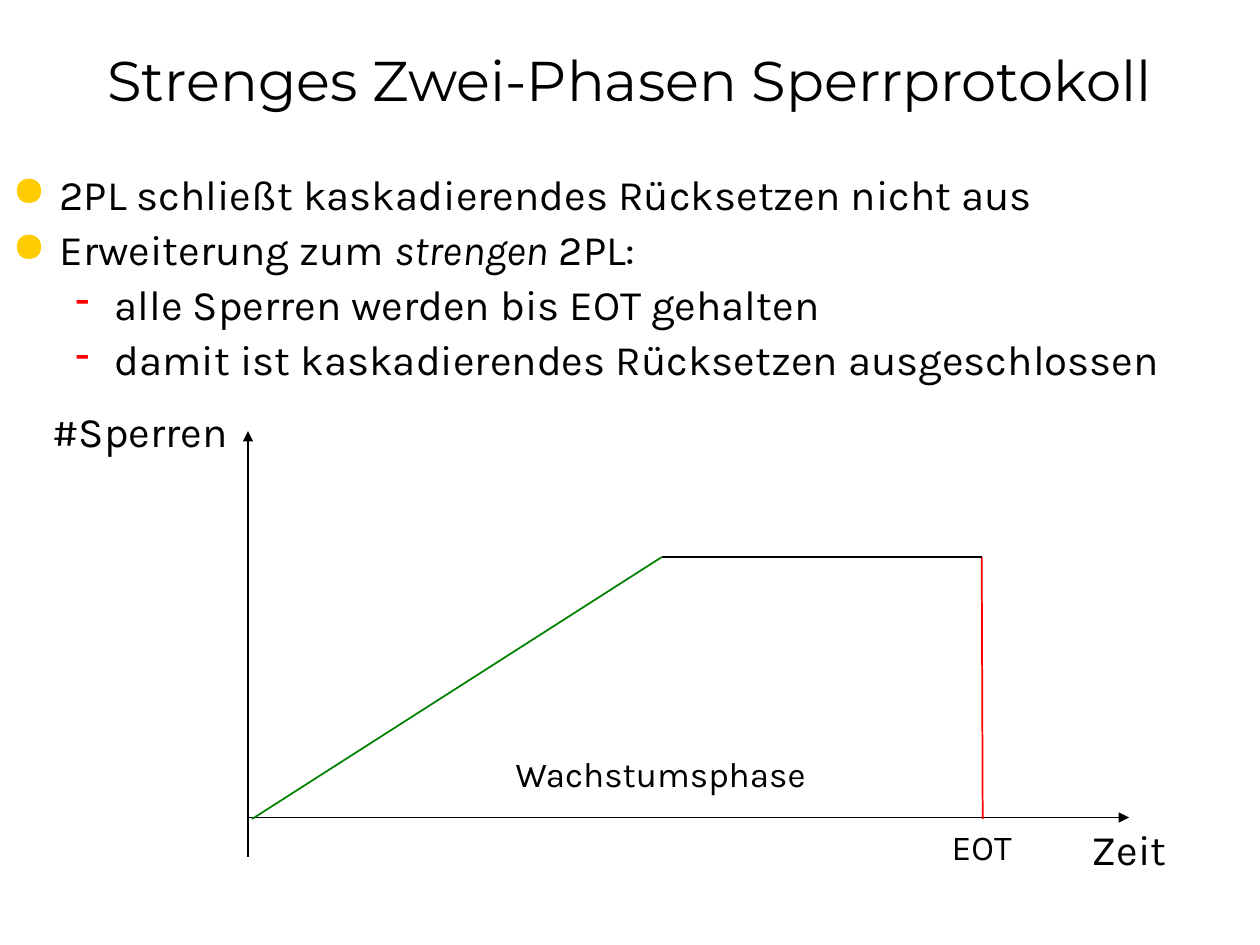
from lxml import etree
from pptx import Presentation
from pptx.dml.color import RGBColor
from pptx.enum.shapes import MSO_CONNECTOR
from pptx.enum.text import MSO_ANCHOR, PP_ALIGN
from pptx.oxml.ns import qn
from pptx.util import Cm, Pt

STRAIGHT = MSO_CONNECTOR.STRAIGHT
MIDDLE, TOP = MSO_ANCHOR.MIDDLE, MSO_ANCHOR.TOP
CENTER, LEFT = PP_ALIGN.CENTER, PP_ALIGN.LEFT

BLACK = RGBColor(0x00, 0x00, 0x00)
GREEN = RGBColor(0x00, 0x80, 0x00)
RED = RGBColor(0xFF, 0x00, 0x00)
YELLOW = RGBColor(0xFF, 0xCC, 0x00)

HEAD_FONT, TEXT_FONT = "Montserrat", "Karla"

# Bullet styles: character, colour, left margin and hanging indent in cm
DOT = ("●", YELLOW, 0.95, -0.95)
DASH = ("-", RED, 2.06, -0.79)

# Each point: bullet style and runs of (text, italic)
POINTS = [
    (DOT, [("2PL schließt kaskadierendes Rücksetzen nicht aus", False)]),
    (DOT, [("Erweiterung zum ", False), ("strengen", True), (" 2PL:", False)]),
    (DASH, [("alle Sperren werden bis EOT gehalten", False)]),
    (DASH, [("damit ist kaskadierendes Rücksetzen ausgeschlossen", False)]),
]

# Diagram coordinates in cm
AXIS_X, AXIS_Y = 5.0, 16.48
BASE_Y, PLATEAU_Y = 16.51, 11.23
PLATEAU_X, EOT_X = 13.34, 19.79


def place(s, x, y, w, h):
    s.left, s.top, s.width, s.height = Cm(x), Cm(y), Cm(w), Cm(h)


def add_run(p, text, size, font=TEXT_FONT, italic=False):
    r = p.add_run()
    r.text = text
    formats = {"name": font, "size": Pt(size), "italic": italic}
    for name, value in formats.items():
        setattr(r.font, name, value)
    r.font.color.rgb = BLACK


def add_bullet(p, char, color, margin, indent):
    pPr = p._p.get_or_add_pPr()
    pPr.set("marL", str(Cm(margin)))
    pPr.set("indent", str(Cm(indent)))
    buClr = etree.SubElement(pPr, qn("a:buClr"))
    etree.SubElement(buClr, qn("a:srgbClr")).set("val", str(color))
    etree.SubElement(pPr, qn("a:buChar")).set("char", char)


def add_title(s, text):
    title = s.shapes.title
    place(title, 0, 0, 25.4, 3.18)
    tf = title.text_frame
    tf.vertical_anchor = MIDDLE
    p = tf.paragraphs[0]
    p.alignment = CENTER
    add_run(p, text, 32, HEAD_FONT)


def add_points(s, points):
    box = s.shapes.add_textbox(Cm(0), Cm(3.38), Cm(25.4), Cm(5.05))
    tf = box.text_frame
    tf.word_wrap = True
    tf.vertical_anchor = TOP
    for i, (style, runs) in enumerate(points):
        p = tf.add_paragraph() if i else tf.paragraphs[0]
        add_bullet(p, *style)
        p.alignment = LEFT
        p.line_spacing = 0.9
        if i:
            p.space_before = Pt(5.6)
        for text, italic in runs:
            add_run(p, text, 24, italic=italic)


def add_label(s, text, size, x, y, w, h):
    box = s.shapes.add_textbox(Cm(x), Cm(y), Cm(w), Cm(h))
    tf = box.text_frame
    tf.word_wrap = True
    p = tf.paragraphs[0]
    p.alignment = CENTER
    add_run(p, text, size)


def add_line(s, x1, y1, x2, y2, color=BLACK, arrow=False):
    line = s.shapes.add_connector(STRAIGHT, Cm(x1), Cm(y1), Cm(x2), Cm(y2))
    line.line.color.rgb = color
    line.line.width = Pt(1)
    if arrow:
        ln = line.line._get_or_add_ln()
        etree.SubElement(ln, qn("a:tailEnd")).set("type", "triangle")
    etree.SubElement(line._element.spPr, qn("a:effectLst"))


def main():
    prs = Presentation()
    prs.slide_width, prs.slide_height = Cm(25.4), Cm(19.05)
    s = prs.slides.add_slide(prs.slide_layouts[5])

    add_title(s, "Strenges Zwei-Phasen Sperrprotokoll")
    add_points(s, POINTS)

    # Axes
    add_line(s, AXIS_X, 17.27, AXIS_X, 8.69, arrow=True)
    add_line(s, AXIS_X, AXIS_Y, 22.76, AXIS_Y, arrow=True)
    add_label(s, "#Sperren", 24, 0.64, 8.05, 4.37, 1.27)
    add_label(s, "Zeit", 24, 21.39, 16.48, 2.74, 1.27)

    # Lock count: growth, release at EOT, plateau
    add_line(s, 5.08, BASE_Y, PLATEAU_X, PLATEAU_Y, GREEN)
    add_line(s, EOT_X, PLATEAU_Y, 19.81, BASE_Y, RED)
    add_line(s, EOT_X, PLATEAU_Y, PLATEAU_X, PLATEAU_Y)
    add_label(s, "Wachstumsphase", 20, 8.1, 15.04, 10.44, 1.09)
    add_label(s, "EOT", 20, 18.62, 16.51, 2.34, 1.09)

    prs.save("out.pptx")


if __name__ == "__main__":
    main()
